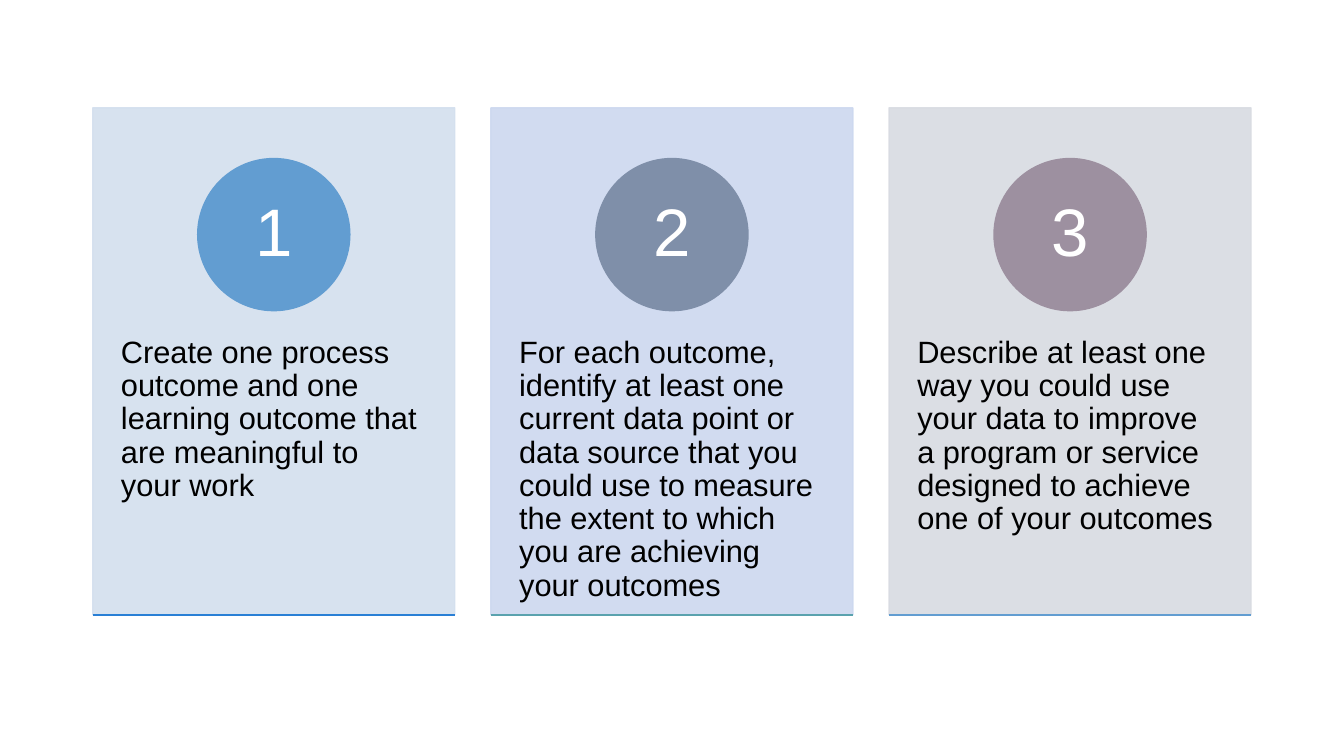
import pptx
import pptx.util
import pptx.dml.color
import pptx.enum.shapes
import pptx.enum.text
import lxml.etree
from pptx.oxml.ns import qn

Inches = pptx.util.Inches
RGBColor = pptx.dml.color.RGBColor
Shapes = pptx.enum.shapes.MSO_SHAPE
Align = pptx.enum.text.PP_ALIGN
Anchor = pptx.enum.text.MSO_ANCHOR

BLACK = RGBColor(0x00, 0x00, 0x00)
WHITE = RGBColor(0xFF, 0xFF, 0xFF)
PALE_BLUE = RGBColor(0xD3, 0xDF, 0xEE)
PALE_VIOLET = RGBColor(0xCD, 0xD8, 0xEF)
PALE_GREY = RGBColor(0xD8, 0xDB, 0xE2)
SKY = RGBColor(0x62, 0x9D, 0xD1)
SLATE = RGBColor(0x7F, 0x8F, 0xA9)
MAUVE = RGBColor(0x9D, 0x90, 0xA0)
BLUE = RGBColor(0x29, 0x7F, 0xD5)
TEAL = RGBColor(0x5A, 0xA2, 0xAE)

SLIDE_WIDTH, SLIDE_HEIGHT = 13.33, 7.5
CARD_LEFT, CARD_TOP = 0.92, 1.07
CARD_WIDTH, CARD_HEIGHT = 3.59, 5.03
CARD_PITCH = 1.1 * CARD_WIDTH
CIRCLE_SIZE = 0.3 * CARD_HEIGHT
NUMBER_SIZE = 0.71 * CIRCLE_SIZE

STEPS = [
    ("Create one process outcome and one learning outcome that are meaningful to your work",
     PALE_BLUE, SKY, BLUE),
    ("For each outcome, identify at least one current data point or data source that you "
     "could use to measure the extent to which you are achieving your outcomes",
     PALE_VIOLET, SLATE, TEAL),
    ("Describe at least one way you could use your data to improve a program or service "
     "designed to achieve one of your outcomes",
     PALE_GREY, MAUVE, SKY),
]


def add_filled_shape(slide, kind, box, color, opacity=100):
    """Draw a preset shape whose fill and outline share one colour."""
    shape = slide.shapes.add_shape(kind, *map(Inches, box))
    shape.shadow.inherit = False
    shape.fill.solid()
    shape.fill.fore_color.rgb = color
    shape.line.color.rgb = color
    shape.line.width = pptx.util.Pt(1)
    if opacity < 100:
        for color_element in shape.element.spPr.iter(qn("a:srgbClr")):
            alpha = lxml.etree.SubElement(color_element, qn("a:alpha"))
            alpha.set("val", str(opacity * 1000))


def add_label(slide, box, text, size, color, insets, align, anchor):
    """Place a wrapped paragraph with the given horizontal and vertical insets."""
    frame = slide.shapes.add_textbox(*map(Inches, box)).text_frame
    frame.word_wrap = True
    frame.vertical_anchor = anchor
    frame.margin_left = frame.margin_right = Inches(insets[0])
    frame.margin_top = frame.margin_bottom = Inches(insets[1])
    paragraph = frame.paragraphs[0]
    paragraph.alignment = align
    paragraph.line_spacing = 0.9
    run = paragraph.add_run()
    run.text = text
    run.font.name = "Arial"
    run.font.size = pptx.util.Pt(size)
    run.font.color.rgb = color


def add_base_line(slide, left, top, width, color):
    """Draw the thin line along the bottom of a card."""
    line = slide.shapes.add_connector(
        pptx.enum.shapes.MSO_CONNECTOR.STRAIGHT,
        Inches(left), Inches(top), Inches(left + width), Inches(top))
    line.line.color.rgb = color
    line.line.width = pptx.util.Pt(1)
    lxml.etree.SubElement(line.element.spPr, qn("a:effectLst"))


def add_step_card(slide, box, number, step):
    """Fill a box with a numbered circle, its instruction and a base line."""
    left, top, width, height = box
    text, card_color, circle_color, line_color = step
    add_filled_shape(slide, Shapes.RECTANGLE, box, card_color, 90)
    add_label(slide, (left, top + 0.38 * height, width, 0.6 * height), text, 22, BLACK,
              (0.28, 0.36), Align.LEFT, Anchor.TOP)

    center_x, center_y = left + width / 2, top + height / 4
    circle_box = (center_x - CIRCLE_SIZE / 2, center_y - CIRCLE_SIZE / 2,
                  CIRCLE_SIZE, CIRCLE_SIZE)
    number_box = (center_x - NUMBER_SIZE / 2, center_y - NUMBER_SIZE / 2,
                  NUMBER_SIZE, NUMBER_SIZE)
    add_filled_shape(slide, Shapes.OVAL, circle_box, circle_color)
    add_label(slide, number_box, str(number), 48, WHITE,
              (0.12, 0.01), Align.CENTER, Anchor.MIDDLE)
    add_base_line(slide, left, top + height, width, line_color)


def main():
    """Build the slide of three step cards and save it."""
    presentation = pptx.Presentation()
    presentation.slide_width = Inches(SLIDE_WIDTH)
    presentation.slide_height = Inches(SLIDE_HEIGHT)
    slide = presentation.slides.add_slide(presentation.slide_layouts[6])
    for column, step in enumerate(STEPS):
        box = (CARD_LEFT + column * CARD_PITCH, CARD_TOP, CARD_WIDTH, CARD_HEIGHT)
        add_step_card(slide, box, column + 1, step)
    presentation.save("out.pptx")


if __name__ == "__main__":
    main()
